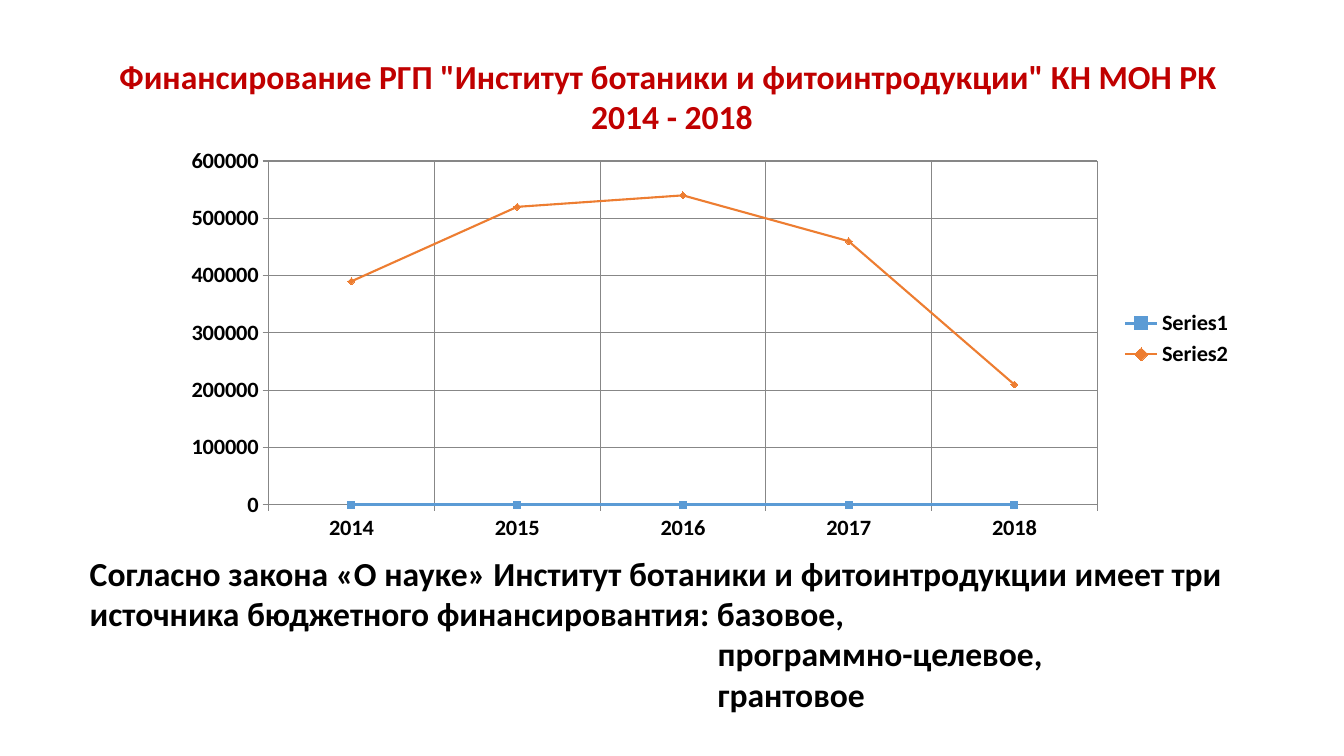
import dataclasses

import lxml.etree
import pptx
import pptx.chart.data
import pptx.dml.color
import pptx.enum.chart
import pptx.enum.text
import pptx.oxml
import pptx.oxml.ns
import pptx.util

Pt = pptx.util.Pt
RGB = pptx.dml.color.RGBColor
Align = pptx.enum.text.PP_ALIGN
Marker = pptx.enum.chart.XL_MARKER_STYLE


@dataclasses.dataclass(frozen=True)
class Theme:
    font: str = "Calibri"
    title: RGB = RGB(0xC0, 0x00, 0x00)
    text: RGB = RGB(0x00, 0x00, 0x00)
    grid: RGB = RGB(0x87, 0x87, 0x87)
    text_size: float = 24
    chart_size: float = 16
    marker_size: int = 5


@dataclasses.dataclass(frozen=True)
class Box:
    left: float
    top: float
    width: float
    height: float


@dataclasses.dataclass(frozen=True)
class Line:
    text: str
    indent: float = 0


@dataclasses.dataclass(frozen=True)
class Series:
    name: str
    values: tuple[int, ...]
    color: RGB
    marker: Marker
    width: float


THEME = Theme()
SLIDE = Box(0, 0, 960, 540)
TITLE_BOX = Box(0, 36, 960, 65.5)
CHART_BOX = Box(102.2, 103.7, 786.2, 283)
BODY_BOX = Box(56.9, 391, 861.8, 123.8)
PLOT = {"x": 0.114, "y": 0.041, "w": 0.753, "h": 0.888}
SOURCE_INDENT = 448.5

TITLE = (
    Line('Финансирование РГП "Институт ботаники и фитоинтродукции" КН МОН РК '),
    Line("2014 - 2018"),
)
BODY = (
    Line("Согласно закона «О науке» Институт ботаники и фитоинтродукции имеет три "
         "источника бюджетного финансировантия: базовое,"),
    Line("программно-целевое,", SOURCE_INDENT),
    Line("грантовое", SOURCE_INDENT),
)
YEARS = [str(year) for year in range(2014, 2019)]
FUNDING = (
    Series("Series1", (0,) * len(YEARS), RGB(0x5B, 0x9B, 0xD5), Marker.SQUARE, 2.25),
    Series("Series2", (390000, 520000, 540000, 460000, 210000),
           RGB(0xED, 0x7D, 0x31), Marker.DIAMOND, 1.5),
)


def fill_placeholder(sp, box: Box, lines: tuple[Line, ...], color: RGB, align: Align) -> None:
    sp.left, sp.top = Pt(box.left), Pt(box.top)
    sp.width, sp.height = Pt(box.width), Pt(box.height)
    tf = sp.text_frame
    tf.word_wrap = True
    tf.auto_size = pptx.enum.text.MSO_AUTO_SIZE.NONE
    tf.vertical_anchor = pptx.enum.text.MSO_ANCHOR.TOP
    for i, line in enumerate(lines):
        p = tf.add_paragraph() if i else tf.paragraphs[0]
        p.alignment = align
        p.space_before = p.space_after = Pt(0)
        p.line_spacing = 1.0
        pPr = p._p.get_or_add_pPr()
        pPr.set("marL", str(Pt(line.indent)))
        pPr.set("indent", "0")
        lxml.etree.SubElement(pPr, pptx.oxml.ns.qn("a:buNone"))
        r = p.add_run()
        r.text = line.text
        r.font.name = THEME.font
        r.font.size = Pt(THEME.text_size)
        r.font.bold = True
        r.font.color.rgb = color


def set_plot_layout(chart) -> None:
    plot_area = chart._chartSpace.chart.plotArea
    for old in plot_area.findall(pptx.oxml.ns.qn("c:layout")):
        plot_area.remove(old)
    sizes = "".join(f'<c:{key} val="{value}"/>' for key, value in PLOT.items())
    plot_area.insert(0, pptx.oxml.parse_xml(
        f'<c:layout {pptx.oxml.ns.nsdecls("c")}><c:manualLayout>'
        '<c:layoutTarget val="inner"/><c:xMode val="edge"/><c:yMode val="edge"/>'
        f"{sizes}</c:manualLayout></c:layout>"))


def add_funding_chart(slide, box: Box, series: tuple[Series, ...]) -> None:
    data = pptx.chart.data.CategoryChartData(number_format="General")
    data.categories = YEARS
    for item in series:
        data.add_series(item.name, item.values)
    chart = slide.shapes.add_chart(
        pptx.enum.chart.XL_CHART_TYPE.LINE_MARKERS,
        Pt(box.left), Pt(box.top), Pt(box.width), Pt(box.height), data).chart
    chart.font.name = THEME.font
    chart.font.size = Pt(THEME.chart_size)
    chart.font.bold = True
    chart.font.color.rgb = THEME.text
    chart.has_title = False
    chart.has_legend = True
    chart.legend.position = pptx.enum.chart.XL_LEGEND_POSITION.RIGHT
    chart.legend.include_in_layout = False
    chart.plots[0].vary_by_categories = False
    set_plot_layout(chart)

    for axis in (chart.category_axis, chart.value_axis):
        axis.has_major_gridlines = True
        axis.major_tick_mark = pptx.enum.chart.XL_TICK_MARK.OUTSIDE
        for line in (axis.format.line, axis.major_gridlines.format.line):
            line.color.rgb = THEME.grid
            line.width = Pt(0.75)
    chart.value_axis.minimum_scale = 0
    chart.value_axis.maximum_scale = 600000
    chart.value_axis.major_unit = 100000

    for s, item in zip(chart.plots[0].series, series):
        s.smooth = False
        s.format.line.color.rgb = item.color
        s.format.line.width = Pt(item.width)
        s.marker.style = item.marker
        s.marker.size = THEME.marker_size
        s.marker.format.fill.solid()
        s.marker.format.fill.fore_color.rgb = item.color
        s.marker.format.line.color.rgb = item.color


def main() -> None:
    prs = pptx.Presentation()
    prs.slide_width, prs.slide_height = Pt(SLIDE.width), Pt(SLIDE.height)
    slide = prs.slides.add_slide(prs.slide_layouts[1])
    add_funding_chart(slide, CHART_BOX, FUNDING)
    fill_placeholder(slide.shapes.title, TITLE_BOX, TITLE, THEME.title, Align.CENTER)
    fill_placeholder(slide.placeholders[1], BODY_BOX, BODY, THEME.text, Align.LEFT)
    prs.save("out.pptx")


if __name__ == "__main__":
    main()
